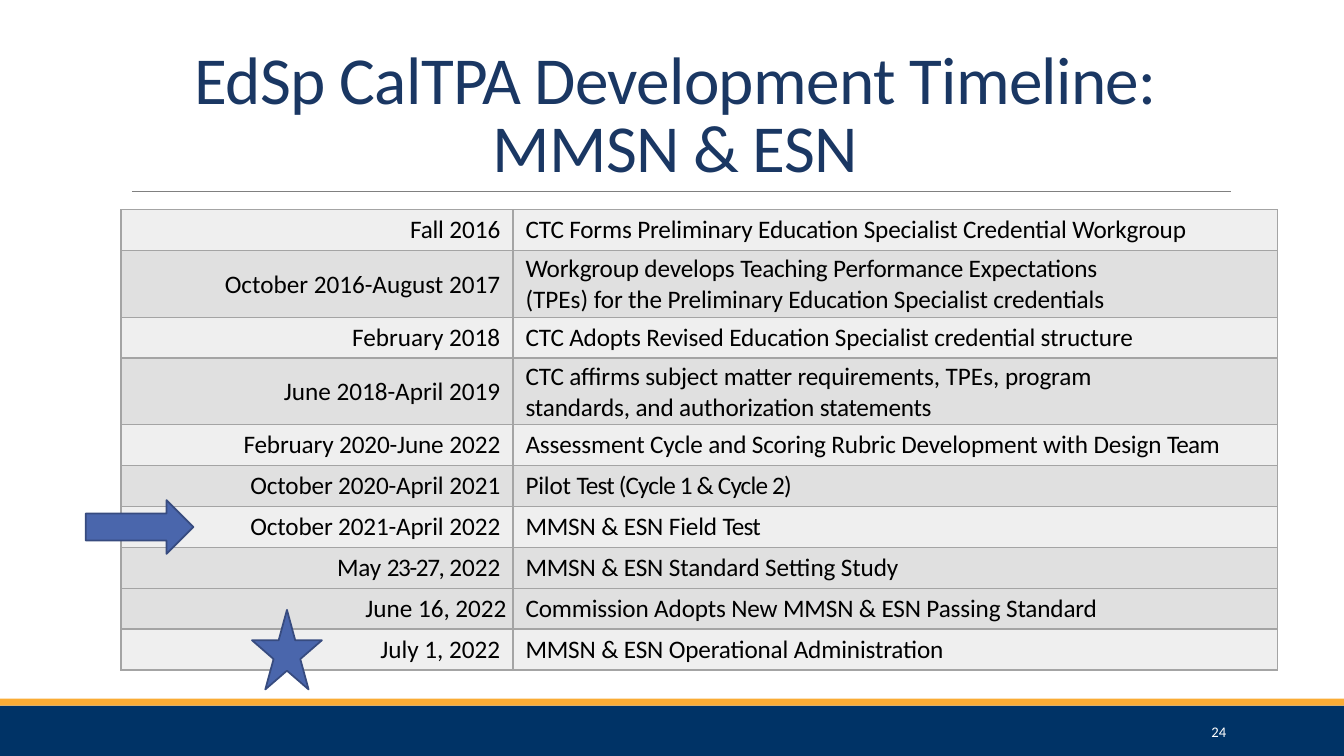
from lxml.etree import SubElement
from pptx import Presentation
from pptx.dml.color import RGBColor
from pptx.enum.shapes import MSO_CONNECTOR, MSO_SHAPE
from pptx.enum.text import MSO_ANCHOR, PP_ALIGN
from pptx.oxml.ns import qn
from pptx.util import Pt

NAVY = RGBColor(0x00, 0x33, 0x66)
GOLD = RGBColor(0xFA, 0xAC, 0x35)
TITLE_BLUE = RGBColor(0x1A, 0x37, 0x63)
MARKER_BLUE = RGBColor(0x4A, 0x66, 0xAC)
MARKER_EDGE = RGBColor(0x37, 0x4B, 0x7F)
GRAY = RGBColor(0x80, 0x80, 0x80)
GRID = RGBColor(0xA4, 0xA4, 0xA4)
LIGHT = RGBColor(0xEF, 0xEF, 0xEF)
DARK = RGBColor(0xE0, 0xE0, 0xE0)
WHITE = RGBColor(0xFF, 0xFF, 0xFF)
BLACK = RGBColor(0, 0, 0)

TITLE = "EdSp CalTPA Development Timeline: MMSN & ESN"
PAGE = "24"

# Each text is a list of (words, letter spacing in points).
# Row: date, event, fill, lines of text, right margin of the date
TIMELINE = [
    ([("Fall ", -0.2), ("2016", 0)],
     [("CTC Forms Preliminary Education Specialist Credential Workgroup", -0.1)],
     LIGHT, 1, 9),
    ([("October 2016-August 2017", 0)],
     [("Workgroup develops ", -0.1), ("Teaching ", -0.2),
      ("Performance Expectations ", -0.1), ("(TPEs) ", 0),
      ("for the Preliminary Education Specialist credentials", -0.1)],
     DARK, 2, 9),
    ([("February 2018", 0)],
     [("CTC Adopts Revised Education Specialist credential structure", -0.1)],
     LIGHT, 1, 9),
    ([("June 2018-April 2019", 0)],
     [("CTC affirms subject ", -0.1), ("matter ", -0.2),
      ("requirements, ", -0.1), ("TPEs, ", 0),
      ("program standards, and authorization ", -0.1), ("statements", -0.2)],
     DARK, 2, 9),
    ([("February 2020-June ", -0.1), ("2022", 0)],
     [("Assessment Cycle and Scoring Rubric Development with Design ", -0.1),
      ("Team", -0.5)],
     LIGHT, 1, 9),
    ([("October 2020-April ", -0.1), ("2021", 0)],
     [("Pilot ", -0.1), ("Test (Cycle 1 & Cycle 2)", -0.6)],
     DARK, 1, 9),
    ([("October 2021-April ", -0.1), ("2022", 0)],
     [("MMSN & ESN Field ", -0.1), ("Test", -0.6)],
     LIGHT, 1, 9),
    ([("May ", -0.1), ("23-27, ", -1), ("2022", 0)],
     [("MMSN & ESN Standard Setting Study", -0.1)],
     DARK, 1, 9),
    ([("June 16, 2022", 0)],
     [("Commission Adopts New MMSN & ESN Passing Standard", -0.1)],
     DARK, 1, 4.5),
    ([("July 1, 2022", 0)],
     [("MMSN & ESN Operational Administration", -0.1)],
     LIGHT, 1, 9),
]

SLIDE_W, SLIDE_H = 960, 540
FOOTER_TOP = 504
GOLD_H = 5
TABLE_LEFT, TABLE_TOP = 86.4, 149.8
COLUMNS = (280, 546)
ROW_HEIGHTS = {1: 29.25, 2: 47.5}
DATE_TOP = {1: 3.6, 2: 13.2}
EVENT_TOP = {1: 3.6, 2: 2.4}
EVENT_RIGHT = {1: 0, 2: 104}


def write(tf, runs, size=18, color=BLACK, align=PP_ALIGN.LEFT, line_spacing=None):
    tf.word_wrap = True
    p = tf.paragraphs[0]
    p.alignment = align
    if line_spacing:
        p.line_spacing = line_spacing
    for text, spacing in runs:
        r = p.add_run()
        r.text = text
        r.font.size = Pt(size)
        r.font.name = "Calibri"
        r.font.color.rgb = color
        if spacing:
            r._r.get_or_add_rPr().set("spc", str(round(spacing * 100)))


def add_text(box, runs, anchor, **fmt):
    tf = slide.shapes.add_textbox(*map(Pt, box)).text_frame
    tf.vertical_anchor = anchor
    write(tf, runs, **fmt)


def add_shape(kind, box, fill, edge=None):
    sp = slide.shapes.add_shape(kind, *map(Pt, box))
    sp.shadow.inherit = False
    sp.fill.solid()
    sp.fill.fore_color.rgb = fill
    if edge:
        sp.line.color.rgb = edge
        sp.line.width = Pt(1.25)
    else:
        sp.line.fill.background()


def fill_cell(cell, runs, fill, left=0, top=0, right=0, **fmt):
    cell.margin_left, cell.margin_top = Pt(left), Pt(top)
    cell.margin_right, cell.margin_bottom = Pt(right), Pt(0)
    tcPr = cell._tc.get_or_add_tcPr()
    for side in ("a:lnL", "a:lnR", "a:lnT", "a:lnB"):
        ln = SubElement(tcPr, qn(side), w=str(Pt(1)))
        SubElement(SubElement(ln, qn("a:solidFill")), qn("a:srgbClr"), val=str(GRID))
    cell.fill.solid()
    cell.fill.fore_color.rgb = fill
    write(cell.text_frame, runs, **fmt)


def add_timeline():
    heights = [ROW_HEIGHTS[lines] for _, _, _, lines, _ in TIMELINE]
    table = slide.shapes.add_table(
        len(TIMELINE), len(COLUMNS), Pt(TABLE_LEFT), Pt(TABLE_TOP),
        Pt(sum(COLUMNS)), Pt(sum(heights))).table
    table.first_row = table.horz_banding = False
    for column, width in zip(table.columns, COLUMNS):
        column.width = Pt(width)
    for i, (date, event, fill, lines, date_right) in enumerate(TIMELINE):
        table.rows[i].height = Pt(heights[i])
        fill_cell(table.cell(i, 0), date, fill, top=DATE_TOP[lines],
                  right=date_right, align=PP_ALIGN.RIGHT)
        fill_cell(table.cell(i, 1), event, fill, left=9, top=EVENT_TOP[lines],
                  right=EVENT_RIGHT[lines])


prs = Presentation()
prs.slide_width, prs.slide_height = Pt(SLIDE_W), Pt(SLIDE_H)
slide = prs.slides.add_slide(prs.slide_layouts[6])

add_shape(MSO_SHAPE.RECTANGLE, (0, FOOTER_TOP, SLIDE_W, SLIDE_H - FOOTER_TOP), NAVY)
add_shape(MSO_SHAPE.RECTANGLE, (0, FOOTER_TOP - GOLD_H, SLIDE_W, GOLD_H), GOLD)

rule = slide.shapes.add_connector(
    MSO_CONNECTOR.STRAIGHT, Pt(94.3), Pt(136.6), Pt(879), Pt(136.6))
rule.line.color.rgb = GRAY
rule.line.width = Pt(0.5)
SubElement(rule._element.spPr, qn("a:effectLst"))

add_text((86.4, 22.3, 792, 114.5), [(TITLE, -0.5)], MSO_ANCHOR.BOTTOM, size=48,
         color=TITLE_BLUE, align=PP_ALIGN.CENTER, line_spacing=0.85)
add_text((780, 508.5, 103, 28.8), [(PAGE, 0)], MSO_ANCHOR.MIDDLE, size=10.5,
         color=WHITE, align=PP_ALIGN.RIGHT)
add_timeline()
add_shape(MSO_SHAPE.RIGHT_ARROW, (61.2, 357.2, 77, 38.4), MARKER_BLUE, MARKER_EDGE)
add_shape(MSO_SHAPE.STAR_5_POINT, (180, 435.6, 50, 56.9), MARKER_BLUE, MARKER_EDGE)

prs.save("out.pptx")
